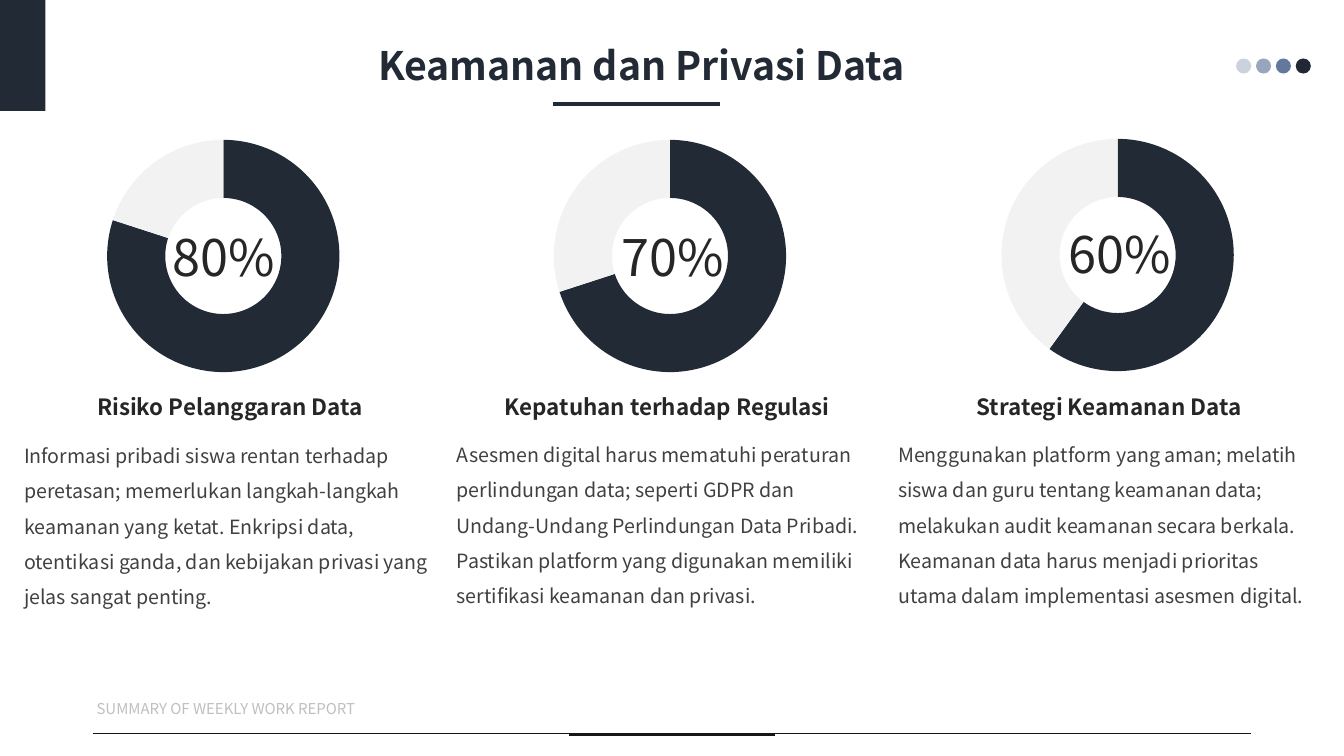
from lxml import etree
from pptx import Presentation
from pptx.chart.data import CategoryChartData
from pptx.dml.color import RGBColor
from pptx.enum.chart import XL_CHART_TYPE
from pptx.enum.shapes import MSO_CONNECTOR, MSO_SHAPE
from pptx.enum.text import MSO_ANCHOR, MSO_AUTO_SIZE, PP_ALIGN
from pptx.oxml.ns import qn
from pptx.util import Inches, Pt

FONT = "Noto Sans CJK SC"
NAVY = "222A35"
INK = "262626"

# Chart position, percentage, percentage position and height,
# column left and width, body top, heading, body
COLUMNS = [
    ((0.28, 1.25), 80, (1.55, 2.19, 0.71), (0.14, 4.28), 4.24,
     "Risiko Pelanggaran Data",
     "Informasi pribadi siswa rentan terhadap peretasan; memerlukan "
     "langkah-langkah keamanan yang ketat. Enkripsi data, otentikasi ganda, "
     "dan kebijakan privasi yang jelas sangat penting."),
    ((4.71, 1.25), 70, (6, 2.19, 0.71), (4.43, 4.38), 4.23,
     "Kepatuhan terhadap Regulasi",
     "Asesmen digital harus mematuhi peraturan perlindungan data; seperti "
     "GDPR dan Undang-Undang Perlindungan Data Pribadi. Pastikan platform "
     "yang digunakan memiliki sertifikasi keamanan dan privasi."),
    ((9.15, 1.24), 60, (10.44, 2.16, 0.73), (8.81, 4.38), 4.23,
     "Strategi Keamanan Data",
     "Menggunakan platform yang aman; melatih siswa dan guru tentang keamanan "
     "data; melakukan audit keamanan secara berkala. Keamanan data harus "
     "menjadi prioritas utama dalam implementasi asesmen digital."),
]


def rgb(color):
    return RGBColor.from_string(color)


def write(sp, text, size, color, bold=False, align=PP_ALIGN.CENTER, spacing=None):
    tf = sp.text_frame
    tf.word_wrap = True
    tf.auto_size = MSO_AUTO_SIZE.SHAPE_TO_FIT_TEXT
    tf.vertical_anchor = MSO_ANCHOR.TOP
    p = tf.paragraphs[0]
    p.alignment = align
    if spacing:
        p.line_spacing = spacing
    r = p.add_run()
    r.text = text
    r.font.name = FONT
    r.font.size = Pt(size)
    r.font.bold = bold
    r.font.color.rgb = rgb(color)


def add_text(s, x, y, w, h, *args, **options):
    sp = s.shapes.add_textbox(Inches(x), Inches(y), Inches(w), Inches(h))
    write(sp, *args, **options)


def add_title(s, text, x, y, w, h):
    sp = s.shapes.title
    sp.left, sp.top, sp.width, sp.height = (Inches(v) for v in (x, y, w, h))
    write(sp, text, 28, NAVY, bold=True)


def add_block(s, kind, x, y, w, h, color):
    sp = s.shapes.add_shape(kind, Inches(x), Inches(y), Inches(w), Inches(h))
    sp.shadow.inherit = False
    sp.fill.solid()
    sp.fill.fore_color.rgb = rgb(color)
    sp.line.fill.background()


def add_rule(s, x1, x2, y, color, width):
    line = s.shapes.add_connector(
        MSO_CONNECTOR.STRAIGHT, Inches(x1), Inches(y), Inches(x2), Inches(y))
    line.line.color.rgb = rgb(color)
    line.line.width = Pt(width)
    etree.SubElement(line._element.spPr, qn("a:effectLst"))


def add_doughnut(s, x, y, percent):
    data = CategoryChartData()
    data.categories = ["1", "2"]
    data.add_series("Series 1", (percent, 100 - percent))
    chart = s.shapes.add_chart(
        XL_CHART_TYPE.DOUGHNUT, Inches(x), Inches(y),
        Inches(3.87), Inches(2.58), data).chart
    chart.has_legend = False
    chart.has_title = False
    chart.font.name = "Calibri"
    chart.font.size = Pt(10)
    chart.font.color.rgb = rgb("000000")
    plot = chart.plots[0]
    plot.vary_by_categories = True
    plot._element.find(qn("c:holeSize")).set("val", "75")
    for i, color in enumerate((NAVY, "F2F2F2")):
        point = plot.series[0].points[i]
        point.format.fill.solid()
        point.format.fill.fore_color.rgb = rgb(color)
        point.format.line.fill.background()


def main():
    prs = Presentation()
    prs.slide_width, prs.slide_height = Inches(13.33), Inches(7.5)
    s = prs.slides.add_slide(prs.slide_layouts[5])

    # Three columns: doughnut, percentage, heading and body
    for chart_at, percent, (px, py, ph), (x, w), body_y, heading, body in COLUMNS:
        add_doughnut(s, *chart_at, percent)
        add_text(s, px, py, 1.34, ph, f"{percent}%", 36, INK)
        add_text(s, x, body_y, w, 1.68, body, 14, "404040",
                 align=PP_ALIGN.LEFT, spacing=1.5)
        add_text(s, x, 3.85, w, 0.37, heading, 16, INK, bold=True)

    # Corner block and dots
    add_block(s, MSO_SHAPE.RECTANGLE, 0, 0, 0.45, 1.1, NAVY)
    for i, color in enumerate(("CBD2DE", "97A5BD", "63789C", "212834")):
        add_block(s, MSO_SHAPE.OVAL, 12.26 + i * 0.197, 0.58, 0.15, 0.15, color)

    # Footer
    add_rule(s, 0.92, 12.41, 7.28, "181717", 0.5)
    add_rule(s, 5.64, 7.69, 7.29, "181717", 2.25)
    add_text(s, 0.86, 6.89, 11.62, 0.28, "SUMMARY OF WEEKLY WORK REPORT",
             10.7, "BFBFBF", align=PP_ALIGN.JUSTIFY)

    # Title and underline
    add_title(s, "Keamanan dan Privasi Data", 0.45, 0.36, 11.82, 0.57)
    add_rule(s, 5.48, 7.14, 1.03, NAVY, 3)

    prs.save("out.pptx")


if __name__ == "__main__":
    main()
